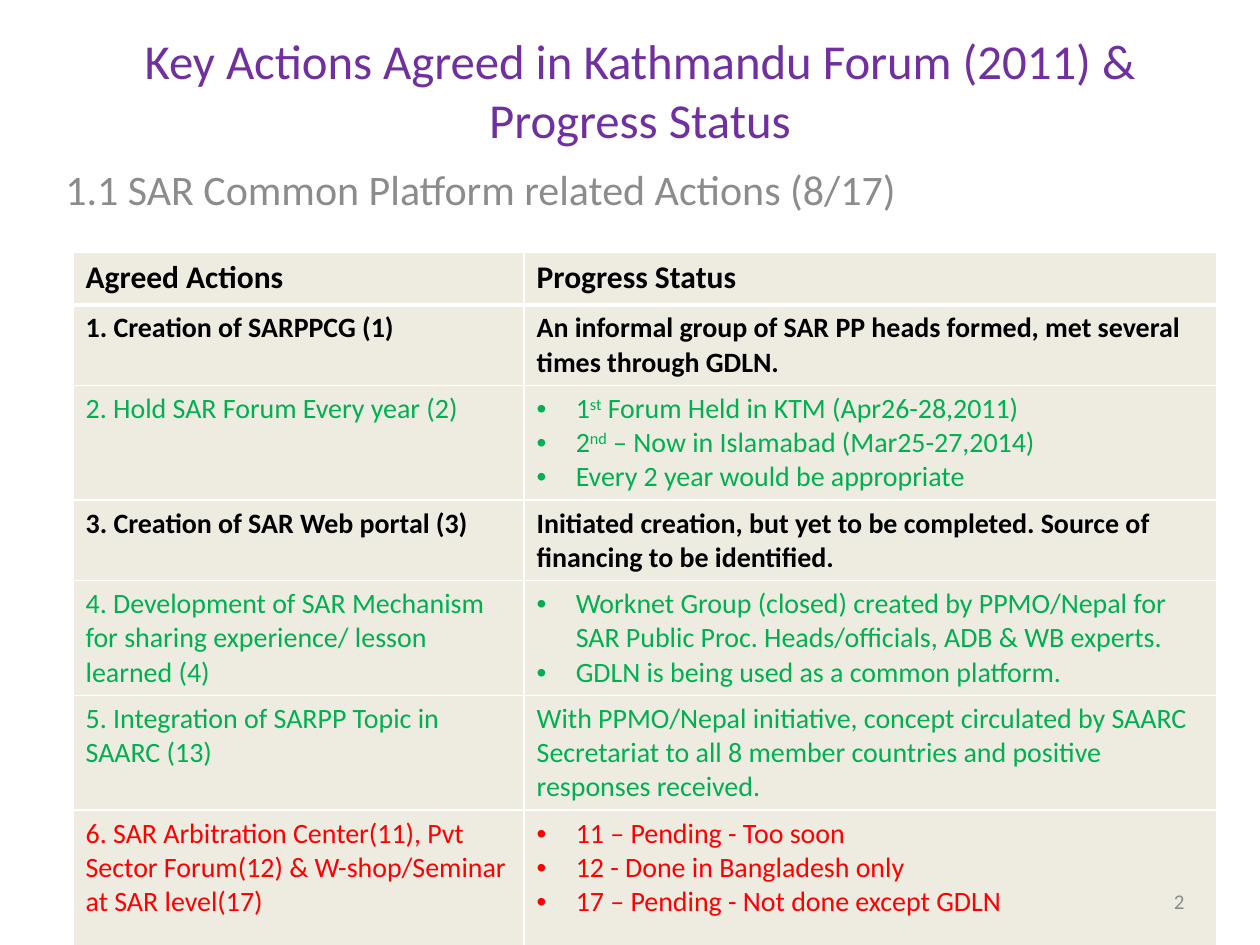
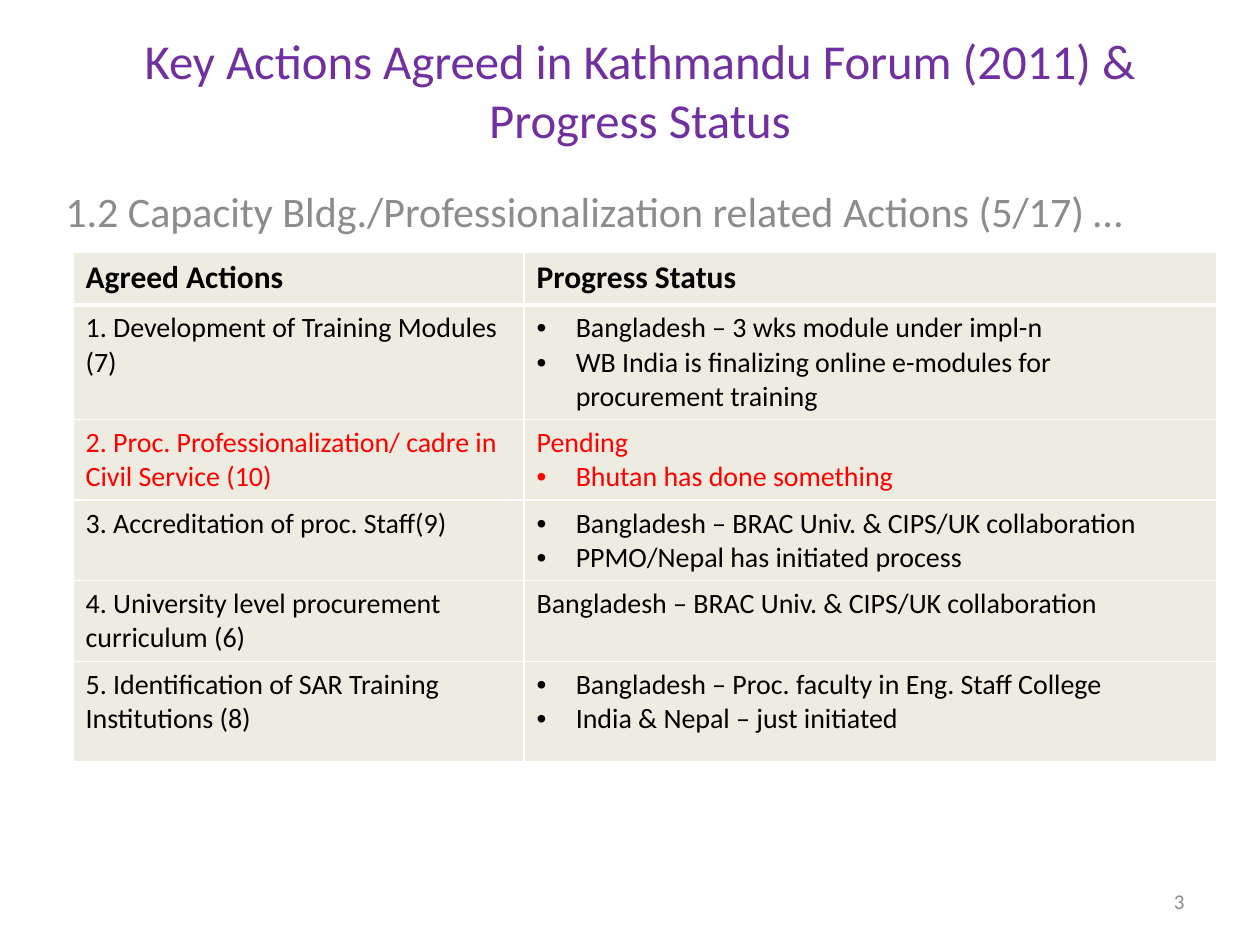
from lxml.etree import SubElement
from pptx import Presentation
from pptx.dml.color import RGBColor
from pptx.enum.text import MSO_ANCHOR, PP_ALIGN
from pptx.oxml import parse_xml
from pptx.oxml.ns import nsdecls, qn
from pptx.util import Inches, Pt

FONT = "Calibri"
PURPLE = RGBColor(0x70, 0x30, 0xA0)
GREY = RGBColor(0x8C, 0x8C, 0x8C)
BLACK = RGBColor(0x00, 0x00, 0x00)
GREEN = RGBColor(0x00, 0xB0, 0x50)
RED = RGBColor(0xFF, 0x00, 0x00)
CREAM = RGBColor(0xEE, 0xEC, 0xE1)
WHITE = RGBColor(0xFF, 0xFF, 0xFF)

TITLE = "Key Actions Agreed in Kathmandu Forum (2011) & Progress Status"
HEADINGS = ("Agreed Actions", ["Progress Status"], BLACK, True)
COLUMN_WIDTHS = (3.58, 5.5)
HEADING_HEIGHT = 0.42
TWO_LINES = 0.64
THREE_LINES = 0.91
BULLET = "• "
BULLET_INDENT = Inches(0.31)

PLATFORM_ACTIONS = [
    ("1. Creation of SARPPCG (1)",
     ["An informal group of SAR PP heads formed, met several times through GDLN."],
     BLACK, True),
    ("2. Hold SAR Forum Every year (2)",
     ["• 1^st^ Forum Held in KTM (Apr26-28,2011)",
      "• 2^nd^ – Now in Islamabad (Mar25-27,2014)",
      "• Every 2 year would be appropriate"],
     GREEN, False),
    ("3. Creation of SAR Web portal (3)",
     ["Initiated creation, but yet to be completed. Source of financing to be identified."],
     BLACK, True),
    ("4. Development of SAR Mechanism for sharing experience/ lesson learned (4)",
     ["• Worknet Group (closed) created by PPMO/Nepal for SAR Public Proc. "
      "Heads/officials, ADB & WB experts.",
      "• GDLN is being used as a common platform."],
     GREEN, False),
    ("5. Integration of SARPP Topic in SAARC (13)",
     ["With PPMO/Nepal initiative, concept circulated by SAARC Secretariat to all "
      "8 member countries and positive responses received."],
     GREEN, False),
    ("6. SAR Arbitration Center(11), Pvt Sector Forum(12) & W-shop/Seminar at SAR level(17)",
     ["• 11 – Pending - Too soon",
      "• 12 - Done in Bangladesh only",
      "• 17 – Pending - Not done except GDLN"],
     RED, False),
]
PLATFORM_HEIGHTS = [TWO_LINES, THREE_LINES, TWO_LINES, THREE_LINES, THREE_LINES, 1.09]

CAPACITY_ACTIONS = [
    ("1. Development of Training Modules (7)",
     ["• Bangladesh – 3 wks module under impl-n",
      "• WB India is finalizing online e-modules for procurement training"],
     BLACK, False),
    ("2. Proc. Professionalization/ cadre in Civil Service (10)",
     ["Pending", "• Bhutan has done something"],
     RED, False),
    ("3. Accreditation of proc. Staff(9)",
     ["• Bangladesh – BRAC Univ. & CIPS/UK collaboration",
      "• PPMO/Nepal has initiated process"],
     BLACK, False),
    ("4. University level procurement curriculum (6)",
     ["Bangladesh – BRAC Univ. & CIPS/UK collaboration"],
     BLACK, False),
    ("5. Identification of SAR Training Institutions (8)",
     ["• Bangladesh – Proc. faculty in Eng. Staff College",
      "• India & Nepal – just initiated"],
     BLACK, False),
]
CAPACITY_HEIGHTS = [THREE_LINES, TWO_LINES, TWO_LINES, TWO_LINES, 0.8]


def style_run(run, size, color, bold=False):
    run.font.name = FONT
    run.font.size = Pt(size)
    run.font.color.rgb = color
    run.font.bold = bold


def add_text(slide, text, box, size, color, align=PP_ALIGN.LEFT, anchor=MSO_ANCHOR.TOP):
    frame = slide.shapes.add_textbox(*map(Inches, box)).text_frame
    frame.word_wrap = True
    frame.vertical_anchor = anchor
    frame.text = text
    paragraph = frame.paragraphs[0]
    paragraph.alignment = align
    style_run(paragraph.runs[0], size, color)


def add_bullet(paragraph):
    properties = paragraph._p.get_or_add_pPr()
    properties.set("marL", str(BULLET_INDENT))
    properties.set("indent", str(-BULLET_INDENT))
    SubElement(properties, qn("a:buFont")).set("typeface", "Arial")
    SubElement(properties, qn("a:buChar")).set("char", BULLET.strip())


def fill_paragraph(paragraph, line, size, color, bold):
    if line.startswith(BULLET):
        add_bullet(paragraph)
        line = line.removeprefix(BULLET)
    for index, part in enumerate(line.split("^")):
        run = paragraph.add_run()
        run.text = part
        style_run(run, size, color, bold)
        if index % 2:
            run._r.get_or_add_rPr().set("baseline", "30000")


def set_borders(cell, top, bottom):
    properties = cell._tc.get_or_add_tcPr()
    widths = {"lnL": 1, "lnR": 1, "lnT": top, "lnB": bottom}
    for position, (side, width) in enumerate(widths.items()):
        properties.insert(position, parse_xml(
            f'<a:{side} {nsdecls("a")} w="{Pt(width)}"><a:solidFill>'
            f'<a:srgbClr val="{WHITE}"/></a:solidFill></a:{side}>'))


def fill_cell(cell, lines, size, color, bold):
    cell.fill.solid()
    cell.fill.fore_color.rgb = CREAM
    frame = cell.text_frame
    for index, line in enumerate(lines):
        paragraph = frame.add_paragraph() if index else frame.paragraphs[0]
        fill_paragraph(paragraph, line, size, color, bold)


def add_action_table(slide, actions, action_heights):
    rows = [HEADINGS] + actions
    heights = [HEADING_HEIGHT] + action_heights
    table = slide.shapes.add_table(
        len(rows), len(COLUMN_WIDTHS), Inches(0.58), Inches(2),
        Inches(sum(COLUMN_WIDTHS)), Inches(sum(heights))).table
    table.first_row = False
    table.horz_banding = False
    for column, width in zip(table.columns, COLUMN_WIDTHS):
        column.width = Inches(width)
    for index, (action, status, color, bold) in enumerate(rows):
        table.rows[index].height = Inches(heights[index])
        size = 16 if index else 18
        for column, lines in enumerate(([action], status)):
            cell = table.cell(index, column)
            fill_cell(cell, lines, size, color, bold)
            set_borders(cell, 3 if index == 1 else 1, 3 if index == 0 else 1)


def add_progress_slide(deck, number, subtitle, subtitle_top, actions, heights):
    slide = deck.slides.add_slide(deck.slide_layouts[6])
    add_text(slide, TITLE, (0.83, 0.25, 8.5, 0.92), 27.9, PURPLE,
             PP_ALIGN.CENTER, MSO_ANCHOR.MIDDLE)
    add_text(slide, subtitle, (0.42, subtitle_top, 9.33, 0.55), 24, GREY)
    add_action_table(slide, actions, heights)
    add_text(slide, str(number), (7.17, 6.95, 2.33, 0.4), 12, GREY,
             PP_ALIGN.RIGHT, MSO_ANCHOR.MIDDLE)


def main():
    deck = Presentation()
    deck.slide_width = Inches(10)
    deck.slide_height = Inches(7.5)
    add_progress_slide(deck, 2, "1.1 SAR Common Platform related Actions (8/17)",
                       1.25, PLATFORM_ACTIONS, PLATFORM_HEIGHTS)
    add_progress_slide(deck, 3,
                       "1.2 Capacity Bldg./Professionalization related Actions (5/17) …",
                       1.42, CAPACITY_ACTIONS, CAPACITY_HEIGHTS)
    deck.save("out.pptx")


if __name__ == "__main__":
    main()
